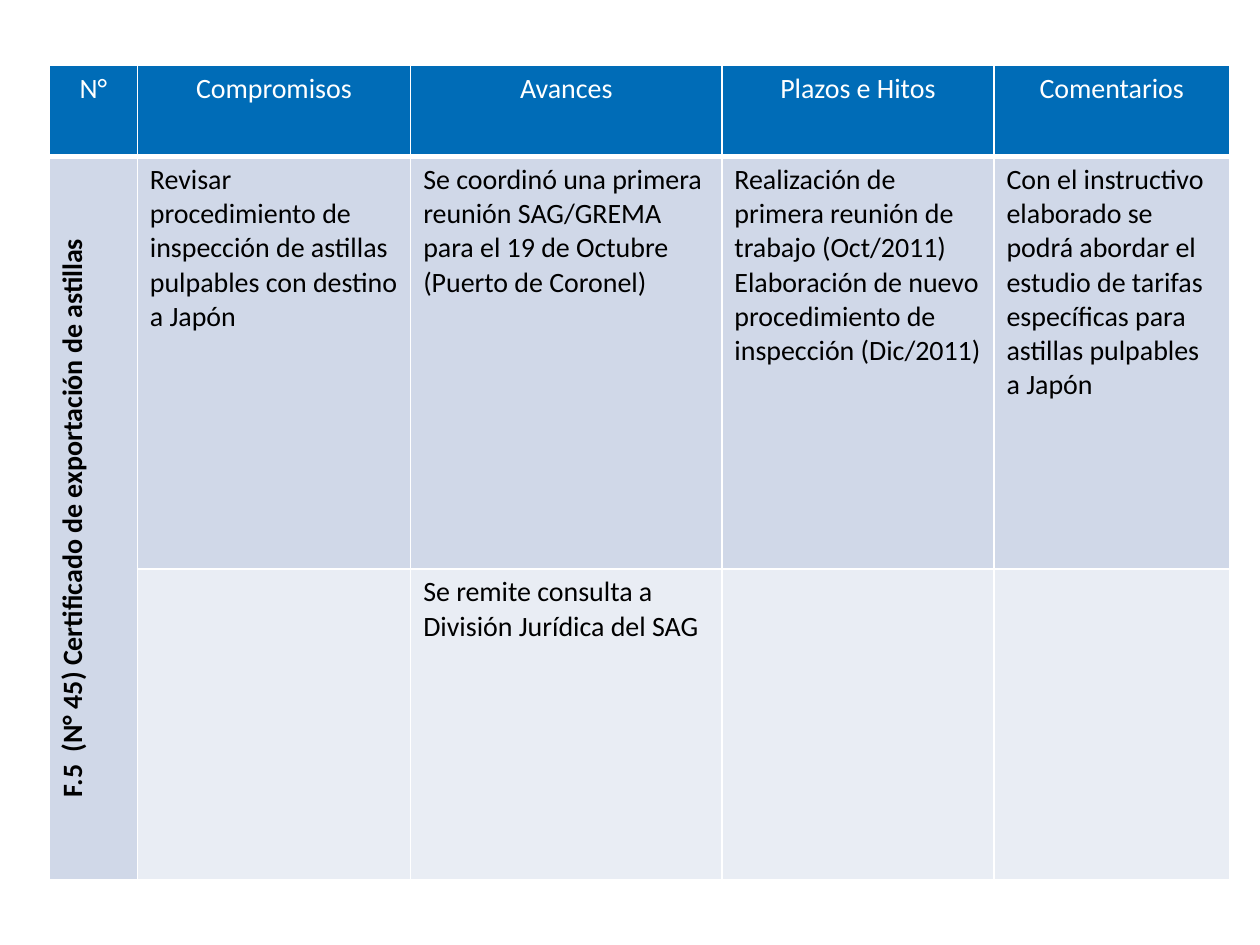
from dataclasses import dataclass

from lxml import etree
from pptx import Presentation
from pptx.dml.color import RGBColor
from pptx.enum.text import PP_ALIGN
from pptx.oxml.ns import qn
from pptx.util import Inches, Pt

LEFT, CENTER = PP_ALIGN.LEFT, PP_ALIGN.CENTER


@dataclass(frozen=True)
class Theme:
    font: str = "Calibri"
    size: int = 16
    header: str = "006CB7"
    band_dark: str = "D0D8E8"
    band_light: str = "E9EDF4"
    border: str = "FFFFFF"
    header_text: str = "FFFFFF"
    body_text: str = "000000"
    line: int = 1
    header_line: int = 3


THEME = Theme()

COLUMN_WIDTHS = (0.7, 2.17, 2.47, 2.16, 1.87)
ROW_HEIGHTS = (0.72, 3.27, 2.46)
HEADERS = ("N°", "Compromisos", "Avances", "Plazos e Hitos", "Comentarios")
TOPIC = "F.5  (N° 45) Certificado de exportación de astillas"
BODY_ROWS = (
    (
        "Revisar procedimiento de inspección de astillas pulpables con destino a Japón",
        "Se coordinó una primera reunión SAG/GREMA para el 19 de Octubre (Puerto de Coronel)",
        "Realización de primera reunión de trabajo (Oct/2011)\n"
        "Elaboración de nuevo procedimiento de inspección (Dic/2011)",
        "Con el instructivo elaborado se podrá abordar el estudio de tarifas "
        "específicas para astillas pulpables a Japón",
    ),
    ("", "Se remite consulta a División Jurídica del SAG", "", ""),
)


def write_text(text_frame, text, *, color=THEME.body_text, bold=False, align=LEFT):
    """Write one paragraph for each line of text."""
    text_frame.text = text
    for paragraph in text_frame.paragraphs:
        paragraph.alignment = align
        paragraph.font.size = Pt(THEME.size)
        for run in paragraph.runs:
            run.font.name = THEME.font
            run.font.size = Pt(THEME.size)
            run.font.bold = bold
            run.font.color.rgb = RGBColor.from_string(color)


def style_cell(cell, fill, bottom_line=THEME.line):
    """Set the borders, which precede the fill in the XML, and then the fill."""
    properties = cell._tc.get_or_add_tcPr()
    for side in "LRTB":
        width = bottom_line if side == "B" else THEME.line
        line = etree.SubElement(properties, qn(f"a:ln{side}"), w=str(Pt(width)))
        solid = etree.SubElement(line, qn("a:solidFill"))
        etree.SubElement(solid, qn("a:srgbClr"), val=THEME.border)
    cell.fill.solid()
    cell.fill.fore_color.rgb = RGBColor.from_string(fill)


def add_commitments_table(slide, left, top, width, height):
    table = slide.shapes.add_table(
        len(ROW_HEIGHTS), len(COLUMN_WIDTHS), left, top, width, height
    ).table
    for column, share in zip(table.columns, COLUMN_WIDTHS):
        column.width = int(width * share / sum(COLUMN_WIDTHS))
    for row, share in zip(table.rows, ROW_HEIGHTS):
        row.height = int(height * share / sum(ROW_HEIGHTS))

    # Header row
    for column, header in enumerate(HEADERS):
        cell = table.cell(0, column)
        style_cell(cell, THEME.header, THEME.header_line)
        write_text(cell.text_frame, header, color=THEME.header_text, align=CENTER)

    # Vertical topic across both body rows
    topic = table.cell(1, 0)
    topic.merge(table.cell(2, 0))
    for row in (1, 2):
        style_cell(table.cell(row, 0), THEME.band_dark)
    write_text(topic.text_frame, TOPIC, bold=True, align=CENTER)
    topic._tc.get_or_add_tcPr().set("vert", "vert270")

    # Body rows
    bands = (THEME.band_dark, THEME.band_light)
    for row, (texts, fill) in enumerate(zip(BODY_ROWS, bands), start=1):
        for column, text in enumerate(texts, start=1):
            cell = table.cell(row, column)
            style_cell(cell, fill)
            write_text(cell.text_frame, text)


def main():
    presentation = Presentation()
    presentation.slide_width = Inches(10)
    presentation.slide_height = Inches(7.5)
    slide = presentation.slides.add_slide(presentation.slide_layouts[6])
    add_commitments_table(slide, Inches(0.39), Inches(0.52), Inches(9.37), Inches(6.46))
    presentation.save("out.pptx")


if __name__ == "__main__":
    main()
